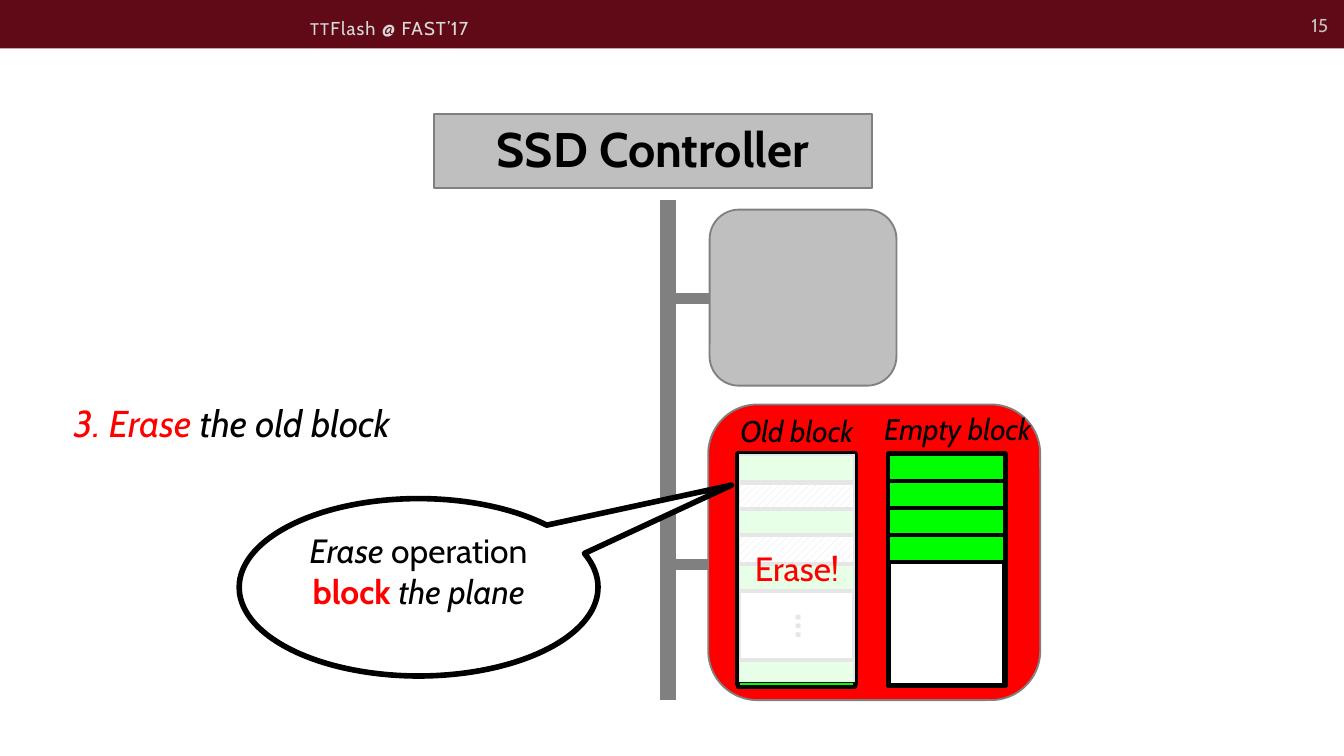
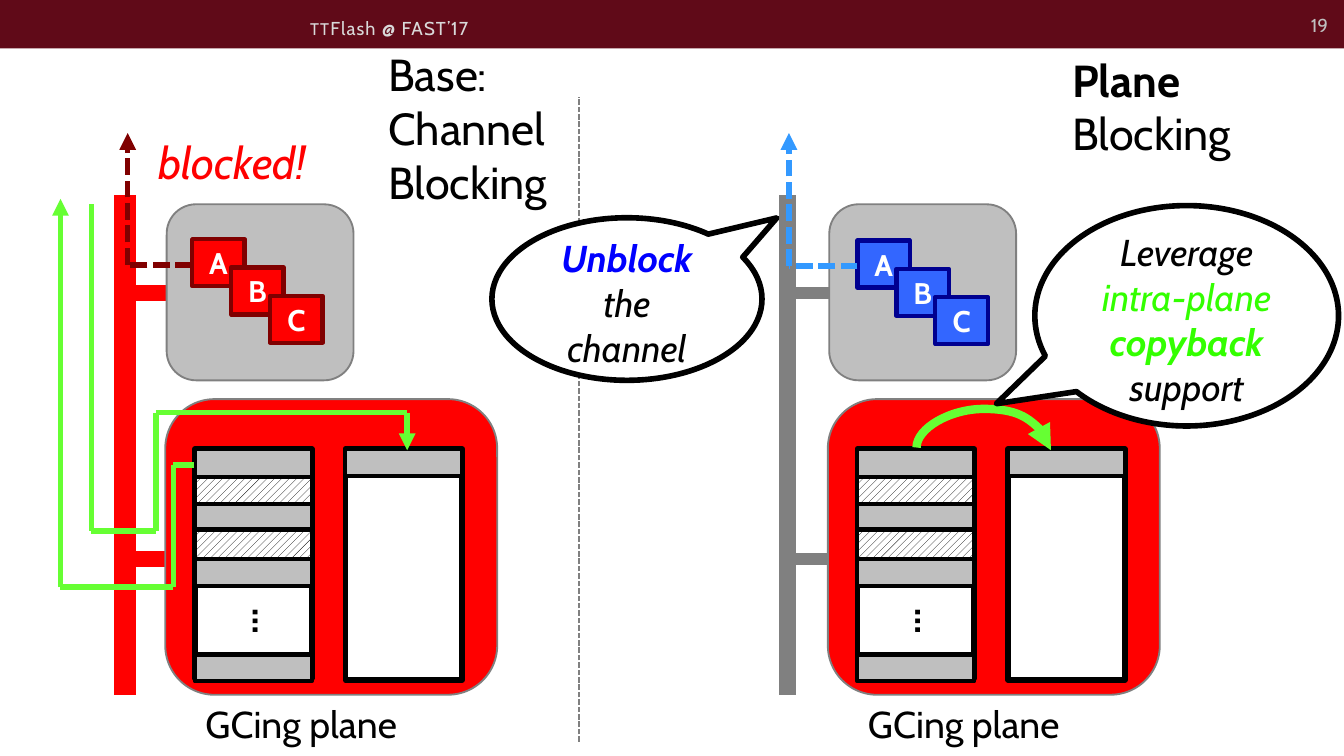
"""Builds two slides about garbage collection blocking inside an SSD."""
from lxml import etree
from pptx import Presentation
from pptx.dml.color import RGBColor
from pptx.enum import dml, shapes, text
from pptx.oxml.ns import qn
from pptx.util import Inches, Pt

COLORS = {
    "band": "600A18", "footer": "D9D9D9", "number": "BFBFBF",
    "white": "FFFFFF", "black": "000000", "silver": "BFBFBF", "gray": "808080",
    "red": "FF0000", "maroon": "800000", "page": "00FF00",
    "blue": "3366FF", "navy": "000090", "sky": "3399FF", "strong blue": "0000FF",
    "lime": "66FF33", "copy": "33FF00",
}
FONT = "Cabin"
SHAPE = shapes.MSO_SHAPE
LEFT, CENTER, RIGHT = text.PP_ALIGN.LEFT, text.PP_ALIGN.CENTER, text.PP_ALIGN.RIGHT
BLOCK_WIDTH, BLOCK_HEIGHT, ROW = 0.87, 1.71, 0.2
OLD_ROWS = [(0, 0.21, True), (0.21, 0.2, False), (0.41, 0.2, True),
            (0.6, 0.22, False), (0.82, 0.2, True), (1.53, 0.2, True)]


def rgb(name):
    """Return the named colour."""
    return RGBColor.from_string(COLORS[name])


def style(font, size=None, color=None, bold=None, italic=None):
    """Apply the given settings to a font."""
    if size:
        font.size = Pt(size)
    if color:
        font.color.rgb = rgb(color)
    if bold is not None:
        font.bold = bold
    if italic is not None:
        font.italic = italic


def write(shape, paragraphs, size, color="black", bold=False, italic=False,
          align=LEFT, middle=False, insets=(0.1, 0.05, 0.1, 0.05)):
    """Fill a shape with paragraphs made of (words, overrides) spans."""
    frame = shape.text_frame
    frame.word_wrap = True
    frame.vertical_anchor = text.MSO_ANCHOR.MIDDLE if middle else text.MSO_ANCHOR.TOP
    (frame.margin_left, frame.margin_top,
     frame.margin_right, frame.margin_bottom) = map(Inches, insets)
    for index, spans in enumerate(paragraphs):
        para = frame.paragraphs[0] if index == 0 else frame.add_paragraph()
        para.alignment = align
        para.font.name = FONT
        style(para.font, size, color, bold, italic)
        for words, overrides in spans:
            span = para.add_run()
            span.text = words
            style(span.font, **overrides)


def label(page, box, words, size, **options):
    """Add a text box holding plain lines or ready-made paragraphs."""
    shape = page.shapes.add_textbox(*map(Inches, box))
    lines = [[(line, {})] if isinstance(line, str) else line for line in words]
    write(shape, lines, size, **options)
    return shape


def block(page, box, fill, line=None, width=1.0, kind=SHAPE.RECTANGLE):
    """Add a preset shape; a fill of None gives diagonal hatching."""
    shape = page.shapes.add_shape(kind, *map(Inches, box))
    shape.shadow.inherit = False
    if fill:
        shape.fill.solid()
        shape.fill.fore_color.rgb = rgb(fill)
    else:
        shape.fill.patterned()
        shape.fill.pattern = dml.MSO_PATTERN.WIDE_UPWARD_DIAGONAL
        shape.fill.fore_color.rgb = rgb("black")
        shape.fill.back_color.rgb = rgb("white")
    if line:
        shape.line.color.rgb = rgb(line)
        shape.line.width = Pt(width)
    else:
        shape.line.fill.background()
    return shape


def wire(page, start, end, color, width, dashed=False, arrow=False,
         kind=shapes.MSO_CONNECTOR.STRAIGHT):
    """Add a connector between two points."""
    line = page.shapes.add_connector(kind, *map(Inches, (*start, *end)))
    line.line.color.rgb = rgb(color)
    line.line.width = Pt(width)
    if dashed:
        line.line.dash_style = dml.MSO_LINE.SQUARE_DOT
    properties = line._element.spPr
    if arrow:
        etree.SubElement(properties.find(qn("a:ln")), qn("a:tailEnd"), type="triangle")
    etree.SubElement(properties, qn("a:effectLst"))
    return line


def route(page, points, color, width=3, dashed=False):
    """Join points with connectors, the last one ending in an arrowhead."""
    for index, (start, end) in enumerate(zip(points, points[1:])):
        wire(page, start, end, color, width, dashed, arrow=index == len(points) - 2)


def bubble(page, box, tip, paragraphs, size, italic=True, bottom=0):
    """Add an elliptical speech bubble whose tip is given relative to its box."""
    shape = block(page, box, "white", "black", 3, SHAPE.OVAL_CALLOUT)
    shape.adjustments[0], shape.adjustments[1] = tip
    write(shape, paragraphs, size, italic=italic, align=CENTER, middle=True,
          insets=(0.1, 0.05, 0.1, bottom))


def header(page, number):
    """Draw the top band with the talk name and slide number."""
    block(page, (0, 0, 10, 0.36), "band")
    label(page, (9.1, 0, 0.88, 0.37), [number], 10, color="number",
          align=RIGHT, middle=True)
    talk = label(page, (2.21, 0.06, 3.56, 0.29),
                 [[("TT", {"size": 9}), ("Flash @ FAST’17", {})]],
                 10, color="footer", middle=True)
    for span in talk.text_frame.paragraphs[0].runs:
        span._r.get_or_add_rPr().set("spc", "60")


def old_block(page, left, top, valid):
    """Draw the block being collected, with valid and hatched pages."""
    block(page, (left, top, BLOCK_WIDTH, BLOCK_HEIGHT), "white", "black", 3)
    for offset, height, is_valid in OLD_ROWS:
        block(page, (left, top + offset, BLOCK_WIDTH, height),
              valid if is_valid else None, "black", 2.25)
    dots = label(page, (left + 0.13, top + 1.03, 0.46, 0.44), ["…"], 20, bold=True)
    dots.rotation = 270


def new_block(page, left, top, valid, used):
    """Draw the receiving block with its first pages used."""
    block(page, (left, top, BLOCK_WIDTH, BLOCK_HEIGHT + 0.01), "white", "black", 3)
    for index in range(used):
        block(page, (left, top + index * ROW, BLOCK_WIDTH, ROW), valid, "black", 2.25)


def channel(page, left, top, valid, used, color="gray", bus=9, stub=6):
    """Draw a bus with an idle chip and a collecting plane at (left, top)."""
    axis = left - 0.3
    for offset in (-0.79, 1.19):
        wire(page, (axis, top + offset), (left + 0.01, top + offset), color, stub)
    block(page, (left + 0.01, top - 1.45, 1.39, 1.31), "silver", "gray", 1,
          SHAPE.ROUNDED_RECTANGLE)
    block(page, (left, top, 2.47, 2.2), "red", "gray", 1, SHAPE.ROUNDED_RECTANGLE)
    old_block(page, left + 0.22, top + 0.37, valid)
    new_block(page, left + 1.34, top + 0.37, valid, used)
    wire(page, (axis, top + 2.2), (axis, top - 1.52), color, bus)


def requests(page, left, top, fill, edge, ray, axis):
    """Draw requests A to C in the chip and the dashed way out of the first."""
    for index, name in enumerate("ABC"):
        cell = block(page, (left + index * 0.29, top + index * 0.21, 0.39, 0.35),
                     fill, edge, 2.25)
        write(cell, [[(name, {})]], 16, "white", bold=True, align=CENTER,
              middle=True, insets=(0.1,) * 4)
    row = top + 0.19
    route(page, [(left, row), (axis, row), (axis, 0.99)], ray, dashed=True)


def erase_slide(page):
    """Build the slide on erasing the old block."""
    header(page, "15")
    left, top = 5.27, 3.01
    label(page, (0.45, 2.6, 3.99, 1.11),
          [[("3. Erase ", {"color": "red"}), ("the old block", {})]],
          20, italic=True, insets=(0.1, 0.38, 0.1, 0.05))
    channel(page, left, top, "page", 4)
    label(page, (left + 0.14, top + 0.01, 1.12, 0.37), ["Old block"], 16, italic=True)
    label(page, (left + 1.21, top, 1.37, 0.37), ["Empty block"], 16, italic=True)
    block(page, (3.23, 0.85, 3.26, 0.55), "silver", "gray")
    label(page, (3.23, 0.84, 3.26, 0.54), ["SSD Controller"], 26, bold=True, align=CENTER)
    veil = block(page, (left + 0.22, top + 0.36, 0.88, BLOCK_HEIGHT), "white", "black", 0.75)
    veil_color = veil._element.spPr.find(qn("a:solidFill"))[0]
    etree.SubElement(veil_color, qn("a:alpha"), val="90000")
    write(veil, [[("Erase!", {})]], 18, "red", align=CENTER, middle=True)
    bubble(page, (1.78, 3.71, 2.67, 1.32), (0.872, -0.576),
           [[("Erase ", {"italic": True}), ("operation ", {}),
             ("block ", {"color": "red", "bold": True}),
             ("the plane", {"italic": True})]],
           18, italic=False, bottom=0.3)


def base_half(page, left, top):
    """Draw the base design, where copying blocks the whole channel."""
    channel(page, left, top, "silver", 1, "red", 12, 9)
    requests(page, left + 0.2, top - 1.19, "red", "maroon", "maroon", left - 0.28)
    label(page, (1.08, 0.95, 1.41, 0.5), ["blocked!"], 24, color="red", italic=True)
    label(page, (2.79, 0.3, 1.52, 1.31), ["Base:", "Channel", "Blocking"], 24)
    route(page, [(1.44, 3.46), (1.29, 3.46), (1.29, 4.37), (0.45, 4.37), (0.45, 1.48)],
          "lime")
    route(page, [(0.68, 1.52), (0.68, 3.95), (1.16, 3.95), (1.16, 3.07),
                 (3.03, 3.07), (3.03, 3.35)], "lime")


def plane_half(page, left, top):
    """Draw plane blocking, where copying stays inside the plane."""
    channel(page, left, top, "silver", 1)
    requests(page, left + 0.22, top - 1.18, "blue", "navy", "sky", left - 0.29)
    label(page, (7.88, 0.34, 1.46, 0.91),
          [[("Plane", {"bold": True})], "Blocking"], 24)
    arc = wire(page, (7.33, 2.84), (7.31, 3.84), "lime", 4.5, arrow=True,
               kind=shapes.MSO_CONNECTOR.CURVE)
    properties = arc._element.spPr
    properties.find(qn("a:xfrm")).set("rot", "16200000")
    guides = properties.find(qn("a:prstGeom")).find(qn("a:avLst"))
    etree.SubElement(guides, qn("a:gd"), name="adj1", fmla="val -1432300")
    bubble(page, (7.7, 1.53, 2.26, 1.64), (-0.627, 0.399),
           [[("Leverage", {})],
            [("intra-plane ", {"color": "copy"}),
             ("copyback ", {"color": "copy", "bold": True}), ("support", {})]], 20)
    bubble(page, (3.66, 1.62, 2.01, 1.21), (0.555, -0.499),
           [[("Unblock", {"color": "strong blue", "bold": True})],
            [("the channel", {})]], 20)


def compare_slide(page):
    """Build the slide comparing channel blocking with plane blocking."""
    header(page, "19")
    top = 2.97
    wire(page, (4.31, 5.52), (4.31, 0.72), "gray", 1, dashed=True)
    for half, left in ((base_half, 1.23), (plane_half, 6.16)):
        half(page, left, top)
        label(page, (left + 0.2, top + 2.2, 2.22, 0.44), ["GCing plane"], 20)


def main():
    """Build and save the deck."""
    deck = Presentation()
    deck.slide_width = Inches(10)
    deck.slide_height = deck.slide_width * 9 // 16
    for build in (erase_slide, compare_slide):
        build(deck.slides.add_slide(deck.slide_layouts[6]))
    deck.save("out.pptx")


if __name__ == "__main__":
    main()
